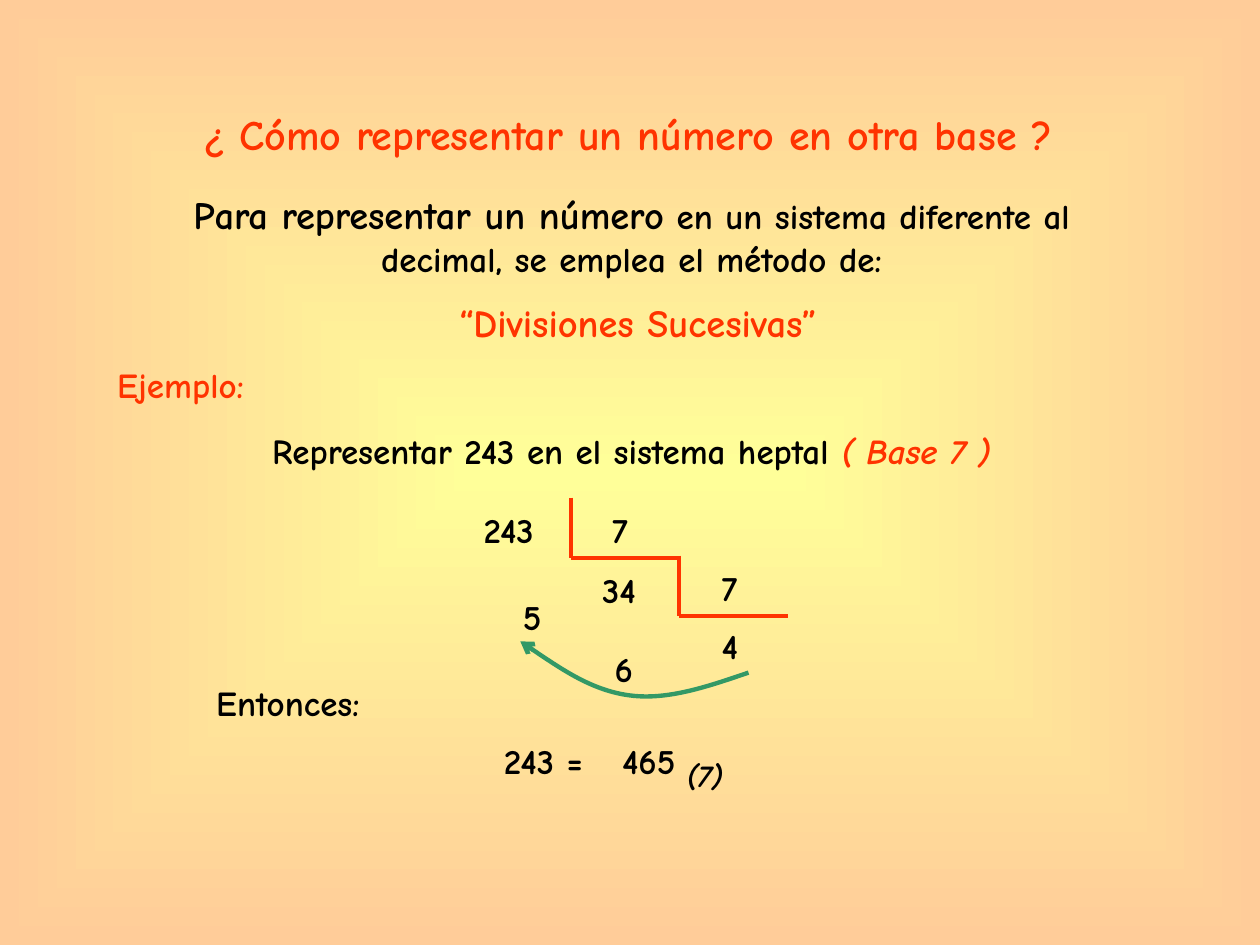
from lxml import etree
from pptx import Presentation
from pptx.dml.color import RGBColor
from pptx.enum.shapes import MSO_CONNECTOR
from pptx.enum.text import PP_ALIGN
from pptx.oxml.ns import qn
from pptx.util import Cm, Pt

LEFT, CENTER = PP_ALIGN.LEFT, PP_ALIGN.CENTER
STRAIGHT = MSO_CONNECTOR.STRAIGHT
FONT = "Comic Neue"
BLACK = RGBColor(0x00, 0x00, 0x00)
RED = RGBColor(0xFF, 0x33, 0x00)
GREEN = RGBColor(0x33, 0x99, 0x66)
YELLOW = RGBColor(0xFF, 0xFF, 0x99)
PEACH = RGBColor(0xFF, 0xCC, 0x99)

deck = Presentation()
deck.slide_width, deck.slide_height = Cm(25.4), Cm(19.05)
slide = deck.slides.add_slide(deck.slide_layouts[6])
shapes = slide.shapes


def write(text, x, y, w, h=1.09, size=20, color=BLACK, italic=False,
          align=LEFT, frame=None, gap=0):
    """Add a text box, or a run to a given frame (a new paragraph if gap)."""
    if frame is None:
        frame = shapes.add_textbox(Cm(x), Cm(y), Cm(w), Cm(h)).text_frame
        frame.word_wrap = True
    para = frame.add_paragraph() if gap else frame.paragraphs[-1]
    para.alignment = align
    if gap:
        para.space_before = Pt(gap)
    run = para.add_run()
    run.text = text
    font = run.font
    font.name, font.size, font.bold, font.italic = FONT, Pt(size), True, italic
    font.color.rgb = color
    return frame


# Background: gradient from the centre outwards
fill = slide.background.fill
fill.gradient()
for stop, color in zip(fill.gradient_stops, (YELLOW, PEACH)):
    stop.color.rgb = color
grad = next(slide._element.iter(qn("a:gradFill")))
grad.remove(grad.find(qn("a:lin")))
shade = etree.SubElement(grad, qn("a:path"), path="shape")
etree.SubElement(shade, qn("a:fillToRect"), l="50000", t="50000", r="50000", b="50000")

# Introduction
wide = dict(x=2.64, w=20.19, align=CENTER)
intro = write("Para representar un número", y=3.73, h=3.43, size=22, **wide)
wide_intro = dict(wide, y=3.73, frame=intro)
write(" en un sistema diferente al decimal, se emplea el método de:", **wide_intro)
write(" ", gap=11, **wide_intro)
write("“Divisiones Sucesivas”", size=22, color=RED, **wide_intro)

# Title and example
write("¿ Cómo representar un número en otra base ?", 2.16, 2.06, 21, 1.27,
      size=24, color=RED, align=CENTER)
write("Ejemplo:", 2.11, 7.21, 5, color=RED)
task = write("Representar 243 en el sistema heptal ", y=8.53, **wide)
write("( Base 7 )", y=8.53, color=RED, italic=True, frame=task, **wide)

# Numbers of the division and the result
for text, x, y, w in (
    ("243", 9.5, 10.13, 2),
    ("7", 12.09, 10.13, 2),
    ("34", 11.89, 11.33, 2),
    ("5", 10.29, 11.89, 1),
    ("7", 14.3, 11.3, 2),
    ("4", 14.3, 12.47, 2),
    ("6", 12.14, 12.93, 1.2),
    ("Entonces:", 4.11, 13.61, 5),
    ("243 =", 9.91, 14.78, 3.2),
    ("465", 12.29, 14.78, 3.6),
):
    write(text, x, y, w)
write("(7)", 13.59, 15.11, 2, 1.02, size=18, italic=True)

# Division brackets: an upright and a bar each
for x, top, base in ((11.51, 10.03, 11.25), (13.69, 11.2, 12.42)):
    for ends in ((x, top, x, base), (x, base, x + 2.2, base)):
        line = shapes.add_connector(STRAIGHT, *(Cm(v) for v in ends))
        line.line.color.rgb = RED
        line.line.width = Pt(2.5)
        etree.SubElement(line._element.spPr, qn("a:effectLst"))

# Reading arrow: start point, then two Bézier curves of three points
start, *bends = [
    (Cm(x), Cm(y)) for x, y in (
        (15.09, 13.56), (14.27, 13.84), (13.46, 14.12), (12.7, 14.02),
        (11.94, 13.92), (11.2, 13.41), (10.49, 12.93))
]
pen = shapes.build_freeform(*start)
pen.add_line_segments(bends, close=False)
arc = pen.convert_to_shape()
arc.shadow.inherit = False
arc.fill.background()
arc.line.color.rgb = GREEN
arc.line.width = Pt(2.5)
etree.SubElement(arc.line._get_or_add_ln(), qn("a:tailEnd"), type="arrow")
steps = list(arc._element.iter(qn("a:lnTo")))
track = steps[0].getparent()
for i in range(0, len(steps), 3):
    curve = etree.SubElement(track, qn("a:cubicBezTo"))
    for step in steps[i:i + 3]:
        curve.append(step[0])
        track.remove(step)

deck.save("out.pptx")
